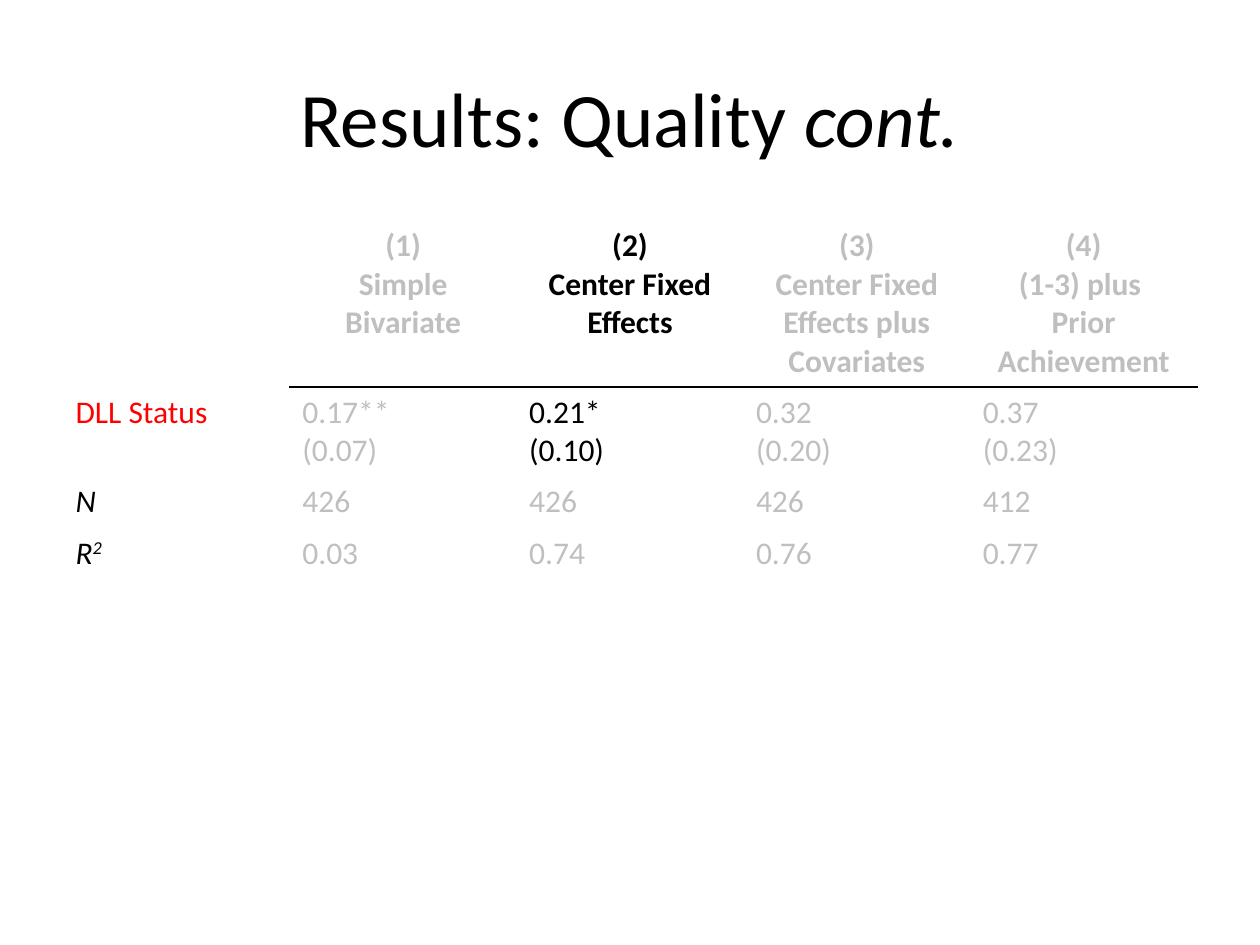
from dataclasses import dataclass

from lxml import etree
from pptx import Presentation
from pptx import util as u
from pptx.dml.color import RGBColor
from pptx.enum import text
from pptx.oxml import ns

BLACK = RGBColor(0x00, 0x00, 0x00)
WHITE = RGBColor(0xFF, 0xFF, 0xFF)
GRAY = RGBColor(0xBF, 0xBF, 0xBF)
RED = RGBColor(0xFF, 0x00, 0x00)
FONT = "Calibri"


@dataclass
class Entry:
    lines: tuple[str, ...] = ()
    color: RGBColor = GRAY
    bold: bool = False
    italic: bool = False
    centered: bool = False
    superscript: str = ""
    rule: str = ""  # border element: a:lnT or a:lnB


def header(*lines: str, color: RGBColor = GRAY) -> Entry:
    return Entry(lines, color, bold=True, centered=True, rule="a:lnB")


def estimate(*lines: str, color: RGBColor = GRAY) -> Entry:
    return Entry(lines, color, rule="a:lnT")


def statistics(label: Entry, values: str) -> list[Entry]:
    return [label] + [Entry((value,)) for value in values.split()]


ROWS = [
    [
        Entry(),
        header("(1)", "Simple Bivariate"),
        header("(2)", "Center Fixed Effects", color=BLACK),
        header("(3)", "Center Fixed Effects plus Covariates"),
        header("(4)", "(1-3) plus ", "Prior Achievement"),
    ],
    [
        Entry(("DLL Status",), RED),
        estimate("0.17**", "(0.07)"),
        estimate("0.21*", "(0.10)", color=BLACK),
        estimate("0.32", "(0.20)"),
        estimate("0.37", "(0.23)"),
    ],
    statistics(Entry(("N",), BLACK, italic=True), "426 426 426 412"),
    statistics(Entry(("R",), BLACK, italic=True, superscript="2"), "0.03 0.74 0.76 0.77"),
]
ROW_HEIGHTS = (1.3, 0.7, 0.41, 0.41)


def add_rule(cell, tag: str) -> None:
    """Draw a 1 pt black border; borders precede the fill in the cell properties."""
    line = etree.Element(ns.qn(tag), w=str(u.Pt(1)))
    fill = etree.SubElement(line, ns.qn("a:solidFill"))
    etree.SubElement(fill, ns.qn("a:srgbClr"), val=str(BLACK))
    cell._tc.get_or_add_tcPr().insert(0, line)


def fill_cell(cell, entry: Entry) -> None:
    cell.fill.solid()
    cell.fill.fore_color.rgb = WHITE
    if entry.rule:
        add_rule(cell, entry.rule)

    frame = cell.text_frame
    for index, line in enumerate(entry.lines):
        paragraph = frame.add_paragraph() if index else frame.paragraphs[0]
        paragraph.add_run().text = line
        if entry.superscript:
            run = paragraph.add_run()
            run.text = entry.superscript
            run._r.get_or_add_rPr().set("baseline", "30000")
        if entry.centered:
            paragraph.alignment = text.PP_ALIGN.CENTER
        font = paragraph.font
        font.name, font.size = FONT, u.Pt(18)
        font.bold, font.italic = entry.bold, entry.italic
        font.color.rgb = entry.color


def add_title(slide) -> None:
    title = slide.shapes.title
    title.left, title.top = u.Inches(0.5), u.Inches(0.3)
    title.width, title.height = u.Inches(9), u.Inches(1.25)
    title.text_frame.vertical_anchor = text.MSO_ANCHOR.MIDDLE
    paragraph = title.text_frame.paragraphs[0]
    paragraph.alignment = text.PP_ALIGN.CENTER
    paragraph.font.name, paragraph.font.size = FONT, u.Pt(44)
    paragraph.font.color.rgb = BLACK
    paragraph.add_run().text = "Results: Quality "
    continued = paragraph.add_run()
    continued.text = "cont."
    continued.font.italic = True


def add_results(slide) -> None:
    table = slide.shapes.add_table(
        len(ROWS), len(ROWS[0]),
        u.Inches(0.5), u.Inches(1.75), u.Inches(9), u.Inches(sum(ROW_HEIGHTS)),
    ).table
    table.first_row = table.horz_banding = False
    for row, height, entries in zip(table.rows, ROW_HEIGHTS, ROWS):
        row.height = u.Inches(height)
        for cell, entry in zip(row.cells, entries):
            fill_cell(cell, entry)


def main() -> None:
    presentation = Presentation()
    presentation.slide_width = u.Inches(10)
    presentation.slide_height = u.Inches(7.5)
    slide = presentation.slides.add_slide(presentation.slide_layouts[5])  # title only
    add_title(slide)
    add_results(slide)
    presentation.save("out.pptx")


if __name__ == "__main__":
    main()
